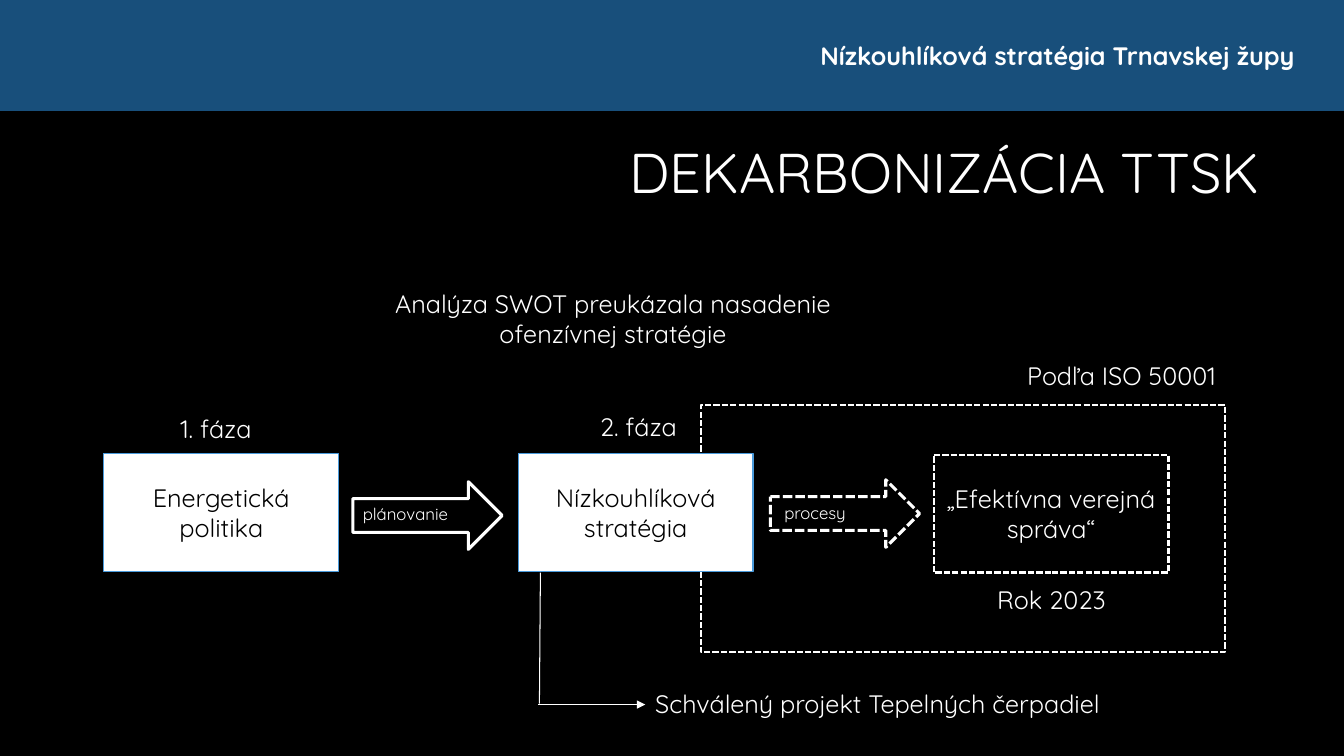
from dataclasses import dataclass

from lxml import etree
from pptx import Presentation
from pptx.dml.color import RGBColor
from pptx.enum.dml import MSO_LINE
from pptx.enum.shapes import MSO_CONNECTOR, MSO_SHAPE
from pptx.enum.text import MSO_ANCHOR, MSO_AUTO_SIZE, PP_ALIGN
from pptx.oxml.ns import qn
from pptx.util import Inches, Pt

RECT, ARROW = MSO_SHAPE.RECTANGLE, MSO_SHAPE.RIGHT_ARROW
STRAIGHT = MSO_CONNECTOR.STRAIGHT
DASH = MSO_LINE.SQUARE_DOT
LEFT, CENTER, RIGHT = PP_ALIGN.LEFT, PP_ALIGN.CENTER, PP_ALIGN.RIGHT
MIDDLE, TOP = MSO_ANCHOR.MIDDLE, MSO_ANCHOR.TOP
GROW, FIXED = MSO_AUTO_SIZE.SHAPE_TO_FIT_TEXT, MSO_AUTO_SIZE.NONE


@dataclass(frozen=True)
class Theme:
    font: str = "Quicksand"
    black: RGBColor = RGBColor(0, 0, 0)
    white: RGBColor = RGBColor(255, 255, 255)
    band: RGBColor = RGBColor(0x18, 0x4F, 0x7B)
    edge: RGBColor = RGBColor(0x4A, 0x9B, 0xDC)
    title: int = 40
    body: int = 18
    small: int = 12


class SlideBuilder:
    def __init__(self, slide, theme):
        self.slide, self.theme = slide, theme
        slide.background.fill.solid()
        slide.background.fill.fore_color.rgb = theme.black

    def set_text(self, shape, lines, aligns, frame, size=None, color=None,
                 bold=False, spacing=None):
        """Fill a text frame, one paragraph per line."""
        tf = shape.text_frame
        for name, value in frame.items():
            setattr(tf, name, value)
        font = {"name": self.theme.font, "size": Pt(size or self.theme.body), "bold": bold}
        for i, (line, align) in enumerate(zip(lines, aligns)):
            p = tf.add_paragraph() if i else tf.paragraphs[0]
            p.alignment, p.line_spacing = align, spacing
            r = p.add_run()
            r.text = line
            for name, value in font.items():
                setattr(r.font, name, value)
            r.font.color.rgb = self.theme.white if color is None else color

    def shape(self, kind, box, fill=None, line=None, width=1.5, dash=None):
        s = self.slide.shapes.add_shape(kind, *map(Inches, box))
        s.shadow.inherit = False
        for part, color in ((s.fill, fill), (s.line.fill, line)):
            if color is None:
                part.background()
            else:
                part.solid()
                part.fore_color.rgb = color
        if line is not None:
            s.line.width = Pt(width)
            if dash:
                s.line.dash_style = dash
        return s

    def block(self, box, text, color, **look):
        s = self.shape(RECT, box, **look)
        self.set_text(s, [text], [CENTER], {"vertical_anchor": MIDDLE, "word_wrap": True},
                      color=color)

    def label(self, box, *lines, aligns=(LEFT, CENTER), size=None):
        s = self.slide.shapes.add_textbox(*map(Inches, box))
        self.set_text(s, lines, aligns,
                      {"vertical_anchor": TOP, "word_wrap": False, "auto_size": GROW},
                      size=size)

    def title(self, box, text):
        s = self.slide.shapes.add_textbox(*map(Inches, box))
        self.set_text(s, [text], [RIGHT],
                      {"vertical_anchor": MIDDLE, "word_wrap": True, "auto_size": FIXED},
                      size=self.theme.title, spacing=0.9)

    def header(self, box, text):
        s = self.shape(RECT, box, fill=self.theme.band)
        self.set_text(s, [text], [RIGHT], {"vertical_anchor": MIDDLE, "word_wrap": True,
                                           "margin_right": Inches(0.49)}, bold=True)

    def connector(self, start, end, head=False):
        c = self.slide.shapes.add_connector(STRAIGHT, *map(Inches, start + end))
        c.line.color.rgb = self.theme.white
        c.line.width = Pt(0.75)
        props = c._element.spPr
        if head:
            etree.SubElement(props.find(qn("a:ln")), qn("a:tailEnd"), type="triangle")
        etree.SubElement(props, qn("a:effectLst"))


def main():
    prs = Presentation()
    prs.slide_width, prs.slide_height = Inches(13.33), Inches(7.5)
    theme = Theme()
    b = SlideBuilder(prs.slides.add_slide(prs.slide_layouts[6]), theme)
    solid = {"fill": theme.white, "line": theme.edge, "width": 1}
    dashed = {"line": theme.white, "dash": DASH}

    # Header and title
    b.header((0, 0, 13.33, 1.1), "Nízkouhlíková stratégia Trnavskej župy")
    b.title((3.17, 1.23, 9.42, 1.02), "DEKARBONIZÁCIA TTSK")

    # ISO frame behind the phases
    b.shape(RECT, (6.95, 4.02, 5.2, 2.45), **dashed)

    # Phase blocks
    for left, top, text, color, look in (
        (1.03, 4.5, "Energetická politika", theme.black, solid),
        (5.14, 4.5, "Nízkouhlíková stratégia", theme.black, solid),
        (9.26, 4.51, "„Efektívna verejná správa“", theme.white, dashed),
    ):
        b.block((left, top, 2.33, 1.17), text, color, **look)

    # Arrows between the phases
    for left, top, dash in ((3.5, 4.78, None), (7.64, 4.76, DASH)):
        b.shape(ARROW, (left, top, 1.48, 0.67), line=theme.white, width=2.25, dash=dash)
    b.label((3.5, 4.95, 1.13, 0.3), "plánovanie", size=theme.small)
    b.label((7.68, 4.94, 0.85, 0.3), "procesy", size=theme.small)

    # Labels around the diagram
    for left, top, width, text in (
        (1.69, 4.05, 1.01, "1. fáza"),
        (5.85, 4.03, 1.01, "2. fáza"),
        (9.79, 5.75, 1.28, "Rok 2023"),
        (10.09, 3.53, 2.16, "Podľa ISO 50001"),
        (6.4, 6.78, 4.97, "Schválený projekt Tepelných čerpadiel"),
    ):
        b.label((left, top, width, 0.4), text)
    b.label((3.82, 2.81, 4.82, 0.71),
            "Analýza SWOT preukázala nasadenie", "ofenzívnej stratégie")

    # Branch to the approved project
    b.connector((5.36, 5.68), (5.35, 6.98))
    b.connector((5.34, 6.99), (6.4, 6.99), head=True)

    prs.save("out.pptx")


if __name__ == "__main__":
    main()
